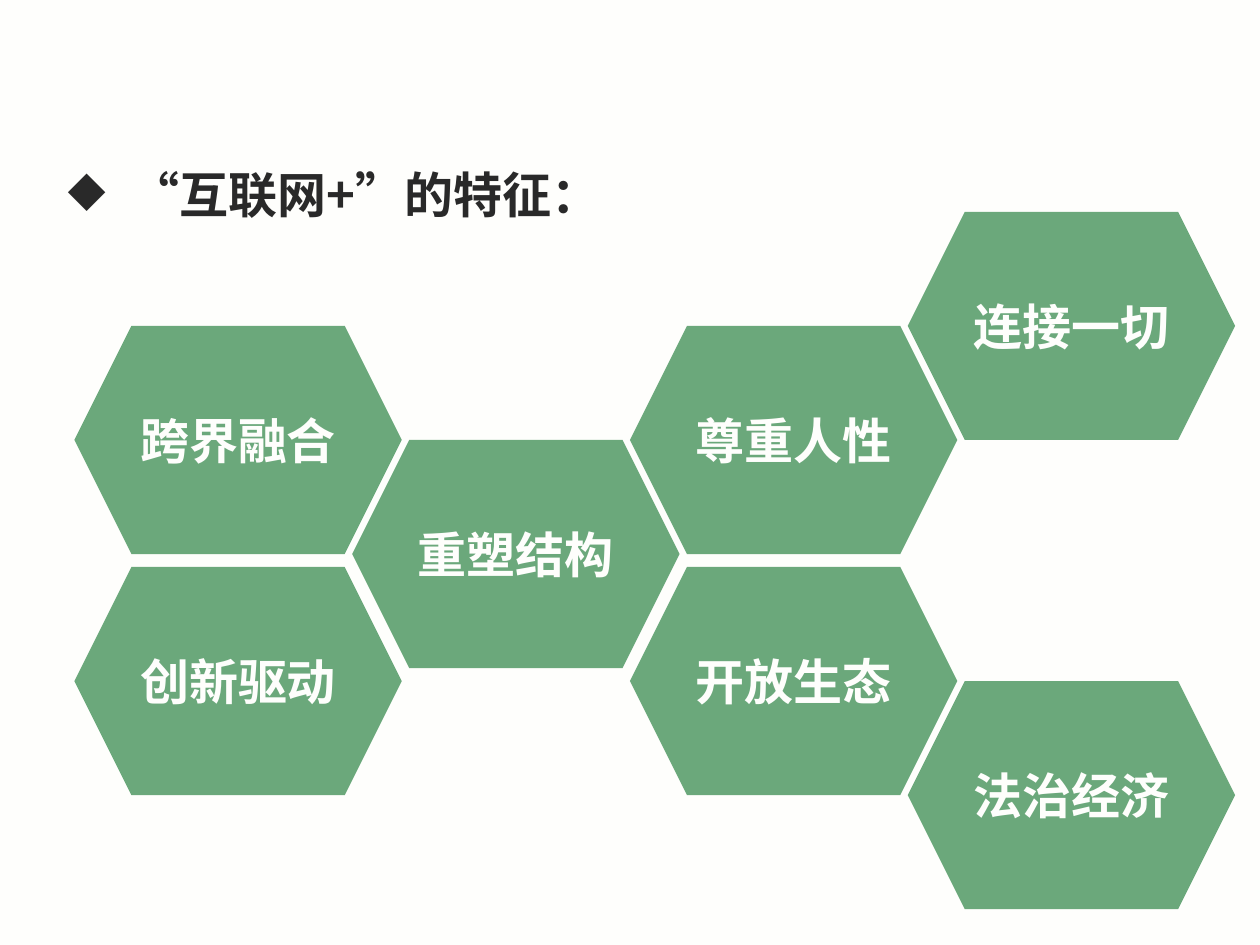
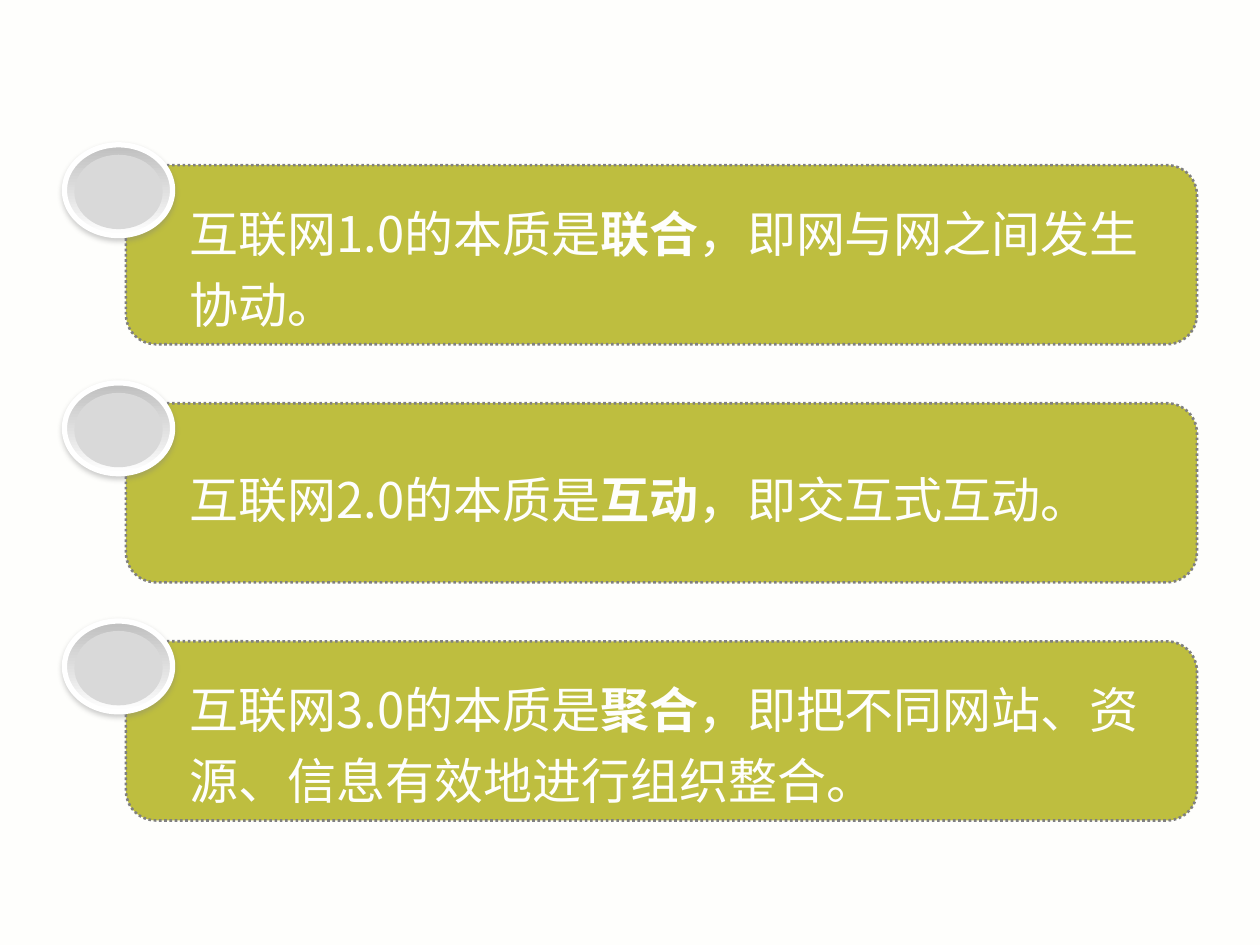
"""Build two slides on the traits and the stages of the Internet+ idea."""
from dataclasses import dataclass
from typing import Optional

from lxml import etree
from pptx import Presentation
from pptx.dml.color import RGBColor
from pptx.enum.dml import MSO_LINE
from pptx.enum.lang import MSO_LANGUAGE_ID
from pptx.enum.shapes import MSO_SHAPE
from pptx.enum.text import MSO_ANCHOR, MSO_AUTO_SIZE, PP_ALIGN
from pptx.oxml.ns import qn
from pptx.util import Cm, Pt

HEXAGON, OVAL, ROUNDED = MSO_SHAPE.HEXAGON, MSO_SHAPE.OVAL, MSO_SHAPE.ROUNDED_RECTANGLE
LEFT, CENTER, JUSTIFY = PP_ALIGN.LEFT, PP_ALIGN.CENTER, PP_ALIGN.JUSTIFY
TOP, MIDDLE = MSO_ANCHOR.TOP, MSO_ANCHOR.MIDDLE
FIT_TEXT = MSO_AUTO_SIZE.SHAPE_TO_FIT_TEXT
DOTTED = MSO_LINE.ROUND_DOT
CHINESE = MSO_LANGUAGE_ID.SIMPLIFIED_CHINESE

PAPER = RGBColor(0xFE, 0xFE, 0xFC)
INK = RGBColor(0x29, 0x29, 0x29)
GREEN = RGBColor(0x6B, 0xA8, 0x7B)
OLIVE = RGBColor(0xBE, 0xBE, 0x3F)
GRAY = RGBColor(0x80, 0x80, 0x80)
SILVER = RGBColor(0xBF, 0xBF, 0xBF)
PEARL = RGBColor(0xD9, 0xD9, 0xD9)
WHITE = RGBColor(0xFF, 0xFF, 0xFF)

FONT = "Noto Sans CJK SC"
TEXT_SIZE = 28
UPPER_TOP, LOWER_TOP = 4.27, 11.43
HEX_LEFT, HEX_WIDTH, HEX_HEIGHT, COLUMN_STEP = 1.5, 6.6, 4.6, 5.6
STAGE_STEP = 4.8


@dataclass(frozen=True)
class Trait:
    """A hexagon: its label, column, band top and half-row steps down."""
    label: str
    column: int
    band_top: float
    half_rows: int


@dataclass(frozen=True)
class Stage:
    """A card: plain and bold wording, and how far the text sits below its edge."""
    lead: str
    keyword: str
    rest: str
    text_drop: float = 0.41


TRAITS = (
    Trait("跨界融合", 0, UPPER_TOP, 1),
    Trait("重塑结构", 1, UPPER_TOP, 2),
    Trait("尊重人性", 2, UPPER_TOP, 1),
    Trait("创新驱动", 0, LOWER_TOP, 0),
    Trait("开放生态", 2, LOWER_TOP, 0),
    Trait("连接一切", 3, UPPER_TOP, 0),
    Trait("法治经济", 3, LOWER_TOP, 1),
)
STAGES = (
    Stage("互联网1.0的本质是", "联合", "，即网与网之间发生协动。"),
    Stage("互联网2.0的本质是", "互动", "，即交互式互动。", 0.97),
    Stage("互联网3.0的本质是", "聚合", "，即把不同网站、资源、信息有效地进行组织整合。"),
)


def add_page(deck):
    """Add a blank page with the shared background."""
    page = deck.slides.add_slide(deck.slide_layouts[6])
    page.background.fill.solid()
    page.background.fill.fore_color.rgb = PAPER
    return page


def add_span(para, text: str, *, color: RGBColor = PAPER, bold: bool = False) -> None:
    """Add one formatted span to a paragraph."""
    span = para.add_run()
    span.text = text
    font = span.font
    font.name, font.size, font.bold = FONT, Pt(TEXT_SIZE), bold
    font.color.rgb = color
    font.language_id = CHINESE
    etree.SubElement(font._element, qn("a:ea")).set("typeface", FONT)


def write(box, text: str, *, color: RGBColor = PAPER, bold: bool = False,
          align: PP_ALIGN = LEFT, anchor: MSO_ANCHOR = TOP,
          spacing: Optional[float] = None):
    """Write the first span of a box and return its paragraph."""
    frame = box.text_frame
    frame.word_wrap = True
    frame.vertical_anchor = anchor
    para = frame.paragraphs[0]
    para.alignment = align
    if spacing:
        para.line_spacing = spacing
    add_span(para, text, color=color, bold=bold)
    return para


def add_textbox(shapes, left: float, top: float, width: float, height: float):
    """Add a text box placed in centimetres."""
    return shapes.add_textbox(Cm(left), Cm(top), Cm(width), Cm(height))


def add_form(shapes, kind: MSO_SHAPE, left: float, top: float, width: float,
             height: float, *, fill: Optional[RGBColor] = None,
             line: Optional[RGBColor] = None, line_width: float = 1.5):
    """Add a preset shape without a shadow."""
    form = shapes.add_shape(kind, Cm(left), Cm(top), Cm(width), Cm(height))
    form.shadow.inherit = False
    if fill is not None:
        form.fill.solid()
        form.fill.fore_color.rgb = fill
    if line is None:
        form.line.fill.background()
    else:
        form.line.color.rgb = line
        form.line.width = Pt(line_width)
    return form


def add_bullet(para, symbol: str, indent: float) -> None:
    """Give a paragraph a hanging bullet."""
    properties = para._p.get_or_add_pPr()
    properties.set("marL", str(Cm(indent)))
    properties.set("indent", str(-Cm(indent)))
    etree.SubElement(properties, qn("a:buChar")).set("char", symbol)


def add_drop_shadow(form) -> None:
    """Put a soft gray shadow under a shape."""
    effects = form._element.spPr.find(qn("a:effectLst"))
    shadow = etree.SubElement(effects, qn("a:outerShdw"), blurRad=str(Pt(3.1)),
                              dist=str(Pt(1.6)), dir="5400000", rotWithShape="0")
    color = etree.SubElement(shadow, qn("a:srgbClr"), val=str(GRAY))
    etree.SubElement(color, qn("a:alpha"), val="38000")


def draw_trait(page, trait: Trait) -> None:
    """Draw one hexagon of the honeycomb."""
    left = HEX_LEFT + trait.column * COLUMN_STEP
    top = trait.band_top + trait.half_rows * HEX_HEIGHT / 2
    hexagon = add_form(page.shapes, HEXAGON, left, top, HEX_WIDTH, HEX_HEIGHT, fill=GREEN)
    hexagon.text_frame.margin_left = hexagon.text_frame.margin_right = 0
    write(hexagon, trait.label, bold=True, align=CENTER, anchor=MIDDLE)


def draw_stage(page, stage: Stage, shift: float) -> None:
    """Draw one card with its round button and text."""
    shapes = page.shapes.add_group_shape().shapes
    card_top = 3.33 + shift
    card = add_form(shapes, ROUNDED, 2.54, card_top, 21.59, 3.61, fill=OLIVE, line=GRAY)
    card.line.dash_style = DOTTED
    rim = add_form(shapes, OVAL, 1.3, card_top - 0.41, 2.18, 1.83, line=WHITE, line_width=3)
    rim.fill.gradient()
    rim.fill.gradient_angle = 270
    for stop, color in zip(rim.fill.gradient_stops, (SILVER, WHITE)):
        stop.color.rgb = color
    add_drop_shadow(rim)
    add_form(shapes, OVAL, 1.5, card_top - 0.21, 1.78, 1.5, fill=PEARL)
    box = add_textbox(shapes, 3.58, card_top + stage.text_drop, 20.45, 3.05)
    para = write(box, stage.lead, spacing=1.2)
    add_span(para, stage.keyword, bold=True)
    add_span(para, stage.rest)


def build_traits(deck) -> None:
    """Build the page of traits."""
    page = add_page(deck)
    for trait in TRAITS:
        draw_trait(page, trait)
    heading = add_textbox(page.shapes, 1.12, 2.95, 24.28, 1.68)
    para = write(heading, "“互联网+”的特征：", color=INK, bold=True,
                 align=JUSTIFY, spacing=1.2)
    heading.text_frame.auto_size = FIT_TEXT
    add_bullet(para, "◆", 1.27)


def build_stages(deck) -> None:
    """Build the page of stages."""
    page = add_page(deck)
    for index, stage in enumerate(STAGES):
        draw_stage(page, stage, index * STAGE_STEP)


def main() -> None:
    """Build and save the deck."""
    deck = Presentation()
    deck.slide_width, deck.slide_height = Cm(25.4), Cm(19.05)
    build_traits(deck)
    build_stages(deck)
    deck.save("out.pptx")


if __name__ == "__main__":
    main()
